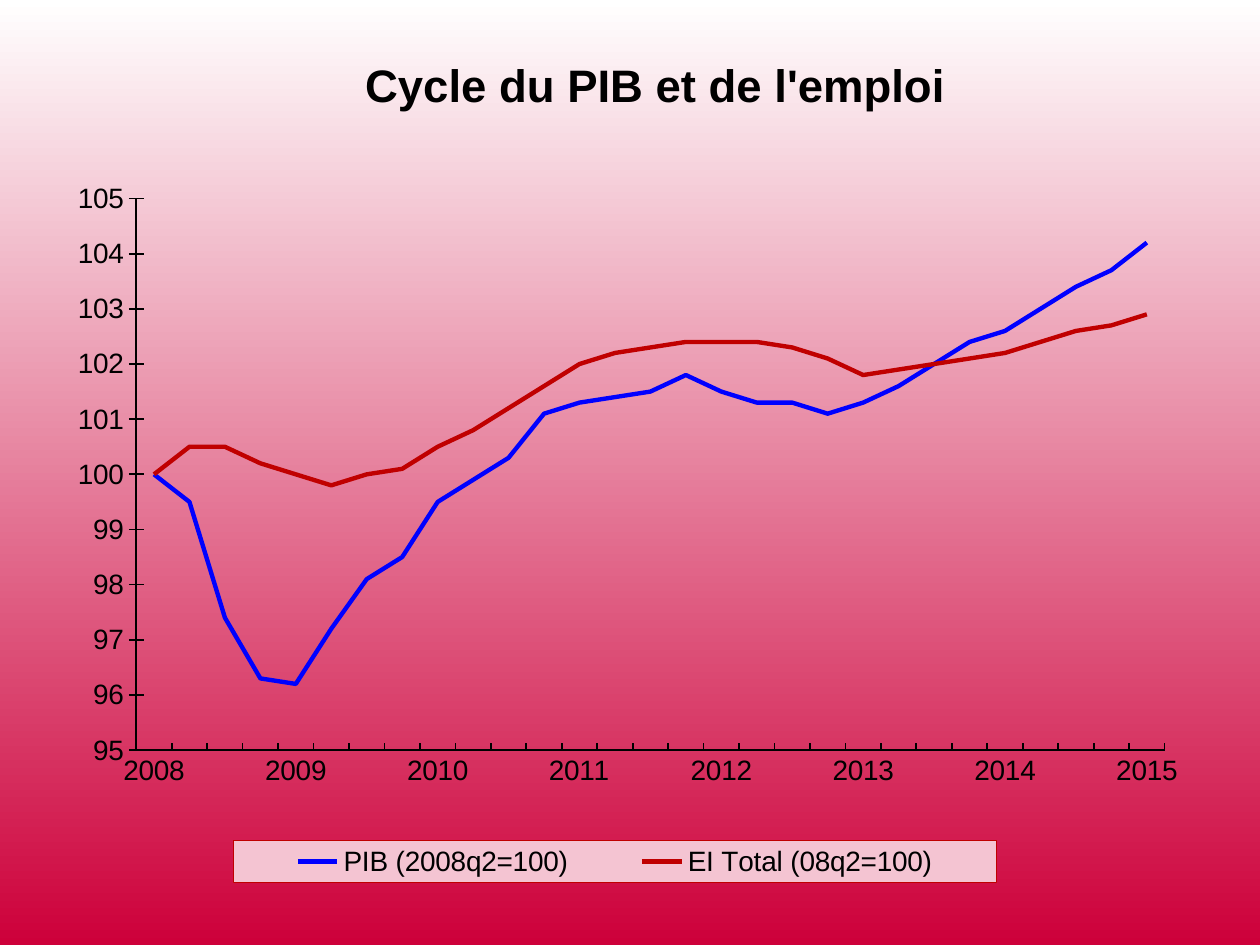
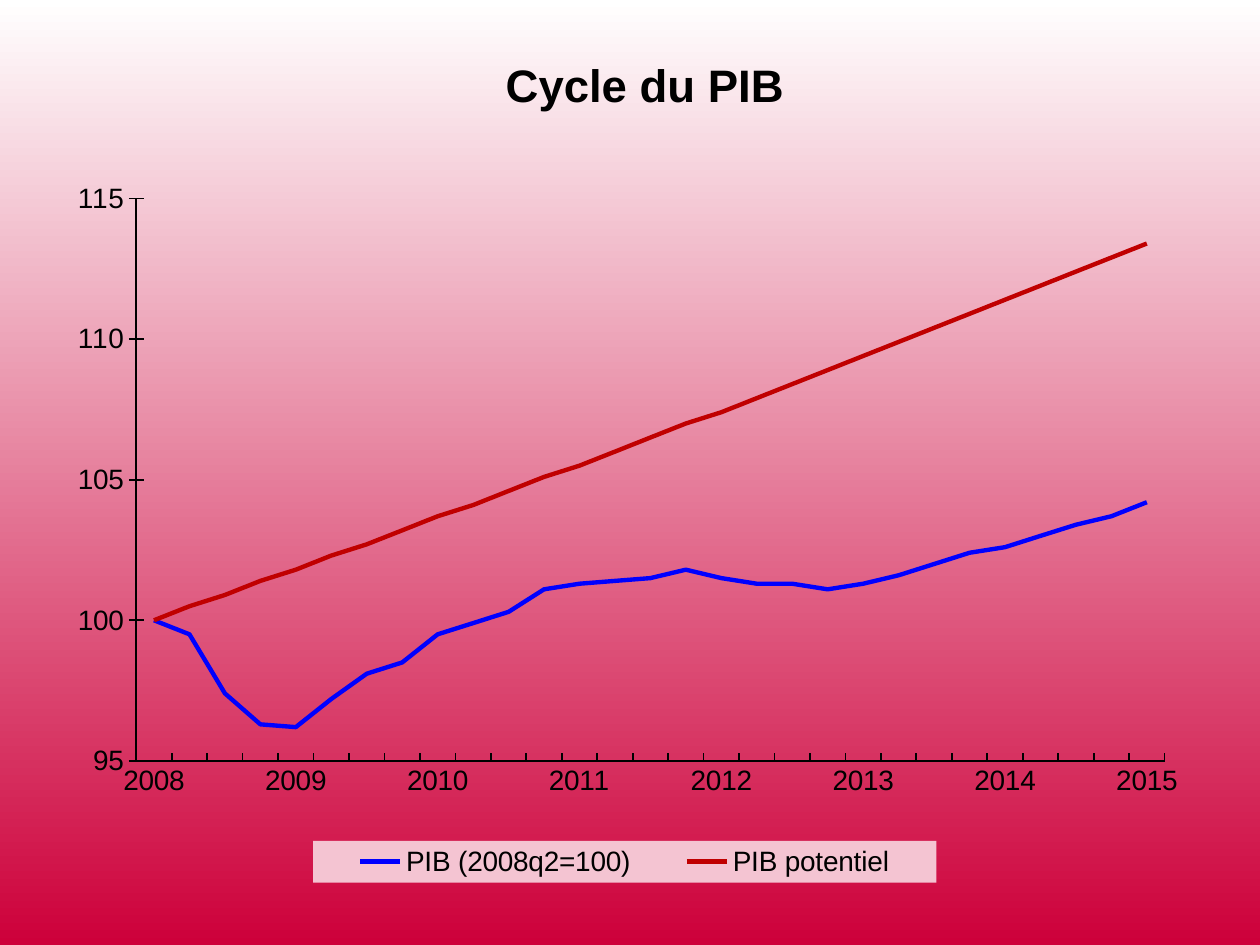
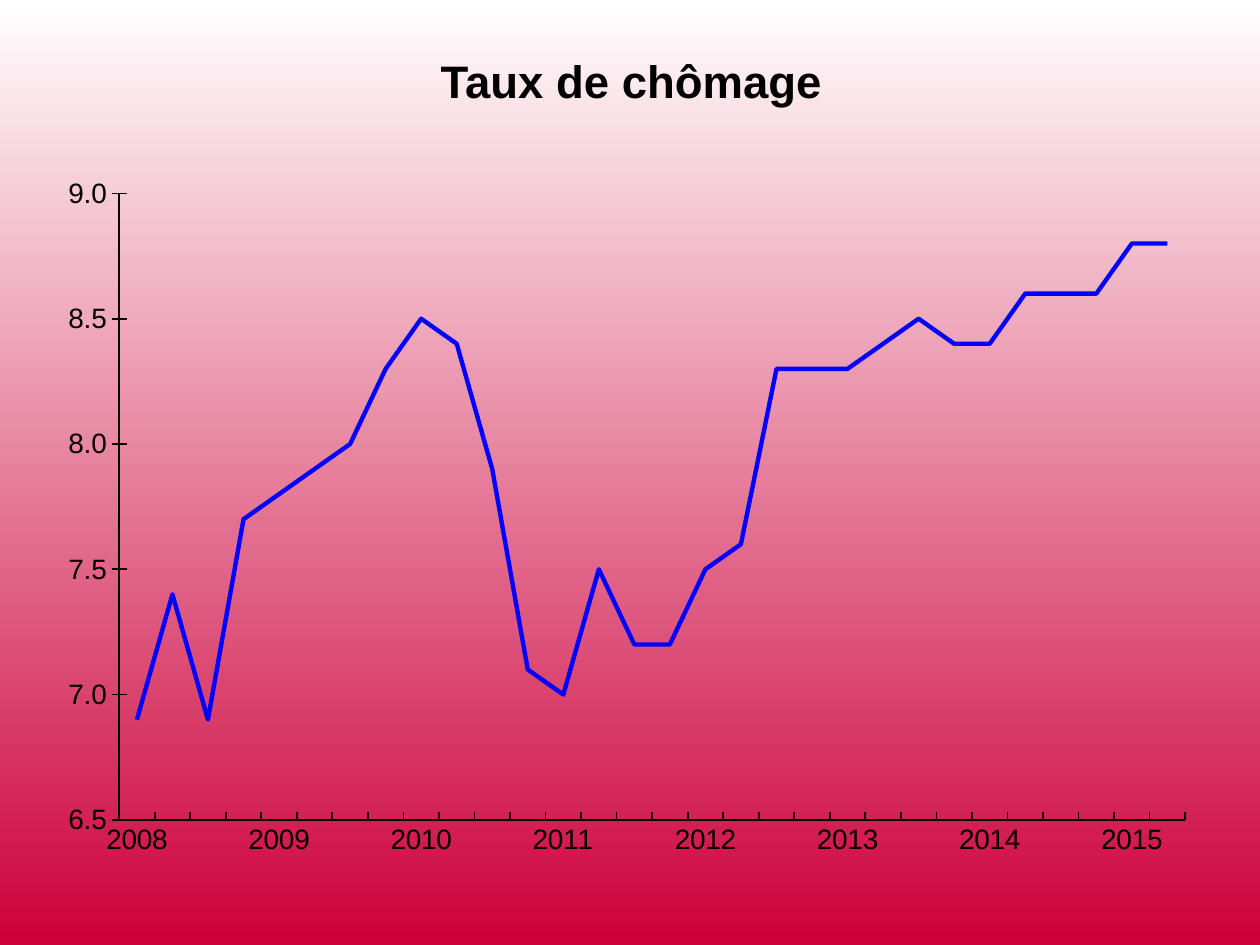
"""Build three slides of quarterly line charts on GDP, employment and unemployment."""
from dataclasses import dataclass
from typing import Any, Optional

from lxml.etree import _Element
from pptx import Presentation
from pptx.chart.axis import ValueAxis
from pptx.chart.chart import Chart
from pptx.chart.data import CategoryChartData
from pptx.dml.color import RGBColor
from pptx.enum.chart import XL_CHART_TYPE, XL_LEGEND_POSITION, XL_TICK_MARK
from pptx.enum.text import MSO_ANCHOR, MSO_AUTO_SIZE, PP_ALIGN
from pptx.oxml import parse_xml
from pptx.oxml.ns import nsdecls, qn
from pptx.presentation import Presentation as Deck
from pptx.slide import Slide
from pptx.util import Cm, Pt

COLORS = {
    "sky": "FFFFFF",
    "ground": "CD003A",
    "ink": "000000",
    "gdp": "0000FF",
    "comparison": "C00000",
    "legend": "F4C4D2",
}
TITLE_FONT = {"name": "Arial", "size": Pt(26), "bold": True}
CHART_FONT = {"name": "Arial", "size": Pt(16), "bold": False}
TITLE_FRAME = {
    "word_wrap": True,
    "auto_size": MSO_AUTO_SIZE.NONE,
    "vertical_anchor": MSO_ANCHOR.MIDDLE,
}
CATEGORY_AXIS = {
    "has_major_gridlines": False,
    "major_tick_mark": XL_TICK_MARK.INSIDE,
    "minor_tick_mark": XL_TICK_MARK.NONE,
}
VALUE_AXIS = CATEGORY_AXIS | {"major_tick_mark": XL_TICK_MARK.CROSS}
FIRST_YEAR = 2008
QUARTERS = 4

GDP = [100, 99.5, 97.4, 96.3, 96.2, 97.2, 98.1, 98.5, 99.5, 99.9,
       100.3, 101.1, 101.3, 101.4, 101.5, 101.8, 101.5, 101.3, 101.3, 101.1,
       101.3, 101.6, 102, 102.4, 102.6, 103, 103.4, 103.7, 104.2]
EMPLOYMENT = [100, 100.5, 100.5, 100.2, 100, 99.8, 100, 100.1, 100.5, 100.8,
              101.2, 101.6, 102, 102.2, 102.3, 102.4, 102.4, 102.4, 102.3, 102.1,
              101.8, 101.9, 102, 102.1, 102.2, 102.4, 102.6, 102.7, 102.9]
POTENTIAL_GDP = [100, 100.5, 100.9, 101.4, 101.8, 102.3, 102.7, 103.2, 103.7, 104.1,
                 104.6, 105.1, 105.5, 106, 106.5, 107, 107.4, 107.9, 108.4, 108.9,
                 109.4, 109.9, 110.4, 110.9, 111.4, 111.9, 112.4, 112.9, 113.4]
UNEMPLOYMENT = [6.9, 7.4, 6.9, 7.7, 7.8, 7.9, 8, 8.3, 8.5, 8.4,
                7.9, 7.1, 7, 7.5, 7.2, 7.2, 7.5, 7.6, 8.3, 8.3,
                8.3, 8.4, 8.5, 8.4, 8.4, 8.6, 8.6, 8.6, 8.8, 8.8]


@dataclass(frozen=True)
class Area:
    """Hold a rectangle as fractions of the chart."""

    x: float
    y: float
    w: float
    h: float


@dataclass(frozen=True)
class Heading:
    """Hold the title wording and its box in centimetres."""

    text: str
    left: float
    top: float
    height: float
    margin_top: float = 0.13
    margin_bottom: float = 0.13


@dataclass(frozen=True)
class Scale:
    """Hold the value axis settings."""

    minimum: float
    maximum: Optional[float]
    step: float
    number_format: str = "0"


@dataclass(frozen=True)
class Curve:
    """Hold one line of a chart."""

    label: str
    values: list[float]
    color: str


@dataclass(frozen=True)
class CycleSlide:
    """Hold the content of one slide."""

    heading: Heading
    scale: Scale
    plot: Area
    curves: list[Curve]
    legend: Optional[Area] = None
    legend_border: Optional[str] = None


GDP_CURVE = Curve("PIB (2008q2=100)", GDP, "gdp")
SLIDES = [
    CycleSlide(
        Heading("Cycle du PIB et de l'emploi ", 1.91, 0.53, 2.34),
        Scale(95, 105, 1),
        Area(0.072, 0.034, 0.901, 0.767),
        [GDP_CURVE, Curve("EI Total (08q2=100)", EMPLOYMENT, "comparison")],
        Area(0.157, 0.927, 0.669, 0.058),
        "comparison",
    ),
    CycleSlide(
        Heading("Cycle du PIB ", 1.7, 0.74, 1.93),
        Scale(95, 115, 5),
        Area(0.072, 0.034, 0.901, 0.782),
        [GDP_CURVE, Curve("PIB potentiel", POTENTIAL_GDP, "comparison")],
        Area(0.227, 0.927, 0.546, 0.058),
    ),
    CycleSlide(
        Heading("Taux de chômage", 1.3, 1.12, 2.01, 0, 1.02),
        Scale(6.5, None, 0.5, "0.0"),
        Area(0.057, 0.027, 0.934, 0.871),
        [Curve("Series 1", UNEMPLOYMENT, "gdp")],
    ),
]


def rgb(key: str) -> RGBColor:
    """Return the named colour."""
    return RGBColor.from_string(COLORS[key])


def apply(target: Any, settings: dict[str, Any]) -> None:
    """Set each attribute of the target from the settings."""
    for attribute, value in settings.items():
        setattr(target, attribute, value)


def layout_xml(area: Area, inner: bool = False) -> _Element:
    """Return a manual layout element for a part of a chart."""
    target = '<c:layoutTarget val="inner"/>' if inner else ""
    sides = "".join(f'<c:{side}Mode val="edge"/>' for side in "xy")
    sizes = "".join(f'<c:{side} val="{getattr(area, side)}"/>' for side in "xywh")
    return parse_xml(
        f'<c:layout {nsdecls("c")}><c:manualLayout>{target}{sides}{sizes}'
        "</c:manualLayout></c:layout>"
    )


def paint_background(deck: Deck) -> None:
    """Give the master the vertical gradient of all slides."""
    fill = deck.slide_master.background.fill
    fill.gradient()
    fill.gradient_angle = 270
    for stop, key in zip(fill.gradient_stops, ("sky", "ground")):
        stop.color.rgb = rgb(key)


def write_heading(slide: Slide, heading: Heading) -> None:
    """Place and format the title placeholder."""
    title = slide.shapes.title
    apply(title, {
        "left": Cm(heading.left),
        "top": Cm(heading.top),
        "width": Cm(22.86),
        "height": Cm(heading.height),
    })
    apply(title.text_frame, TITLE_FRAME | {
        "text": heading.text,
        "margin_top": Cm(heading.margin_top),
        "margin_bottom": Cm(heading.margin_bottom),
    })
    paragraph = title.text_frame.paragraphs[0]
    paragraph.alignment = PP_ALIGN.CENTER
    font = paragraph.runs[0].font
    apply(font, TITLE_FONT)
    font.color.rgb = rgb("ink")


def format_value_axis(axis: ValueAxis, scale: Scale) -> None:
    """Set the range and number format of the value axis."""
    apply(axis, VALUE_AXIS | {
        "minimum_scale": scale.minimum,
        "maximum_scale": scale.maximum,
        "major_unit": scale.step,
    })
    apply(axis.tick_labels, {
        "number_format": scale.number_format,
        "number_format_is_linked": False,
    })


def show_every_label(chart: Chart) -> None:
    """Label and mark every category so that the years all show."""
    anchor = chart.category_axis._element.find(qn("c:noMultiLvlLbl"))
    for tag in ("tickLblSkip", "tickMarkSkip"):
        anchor.addprevious(parse_xml(f'<c:{tag} {nsdecls("c")} val="1"/>'))


def add_legend(chart: Chart, area: Area, border: Optional[str]) -> None:
    """Add the tinted legend below the plot."""
    chart.has_legend = True
    apply(chart.legend, {
        "position": XL_LEGEND_POSITION.BOTTOM,
        "include_in_layout": False,
    })
    legend = chart.legend._element
    for old in legend.findall(qn("c:layout")):
        legend.remove(old)
    legend.find(qn("c:legendPos")).addnext(layout_xml(area))
    outline = (
        f'<a:solidFill><a:srgbClr val="{COLORS[border]}"/></a:solidFill>'
        if border else "<a:noFill/>"
    )
    legend.find(qn("c:overlay")).addnext(parse_xml(
        f'<c:spPr {nsdecls("c", "a")}><a:solidFill>'
        f'<a:srgbClr val="{COLORS["legend"]}"/></a:solidFill>'
        f'<a:ln w="9525">{outline}</a:ln></c:spPr>'
    ))


def draw_chart(slide: Slide, content: CycleSlide) -> None:
    """Draw the line chart of one slide."""
    data = CategoryChartData(number_format="0.0")
    data.categories = [
        "" if quarter % QUARTERS else str(FIRST_YEAR + quarter // QUARTERS)
        for quarter in range(len(content.curves[0].values))
    ]
    for curve in content.curves:
        data.add_series(curve.label, curve.values)
    chart = slide.shapes.add_chart(
        XL_CHART_TYPE.LINE, Cm(1.09), Cm(3.51), Cm(23.01), Cm(14.5), data
    ).chart
    chart.has_title = False
    chart.has_legend = False
    apply(chart.font, CHART_FONT)
    chart.font.color.rgb = rgb("ink")
    chart.plots[0].vary_by_categories = False

    for series, curve in zip(chart.plots[0].series, content.curves):
        series.smooth = False
        series.format.line.width = Pt(2.5)
        series.format.line.color.rgb = rgb(curve.color)

    apply(chart.category_axis, CATEGORY_AXIS)
    format_value_axis(chart.value_axis, content.scale)
    for axis in (chart.category_axis, chart.value_axis):
        axis.format.line.width = Pt(1)
        axis.format.line.color.rgb = rgb("ink")
    show_every_label(chart)

    plot_area = chart._chartSpace.chart.plotArea
    for old in plot_area.findall(qn("c:layout")):
        plot_area.remove(old)
    plot_area.insert(0, layout_xml(content.plot, inner=True))
    if content.legend:
        add_legend(chart, content.legend, content.legend_border)


def main() -> None:
    """Build and save the presentation."""
    deck = Presentation()
    apply(deck, {"slide_width": Cm(25.4), "slide_height": Cm(19.05)})
    paint_background(deck)
    title_only = deck.slide_layouts[5]
    for content in SLIDES:
        slide = deck.slides.add_slide(title_only)
        write_heading(slide, content.heading)
        draw_chart(slide, content)
    deck.save("out.pptx")


if __name__ == "__main__":
    main()
